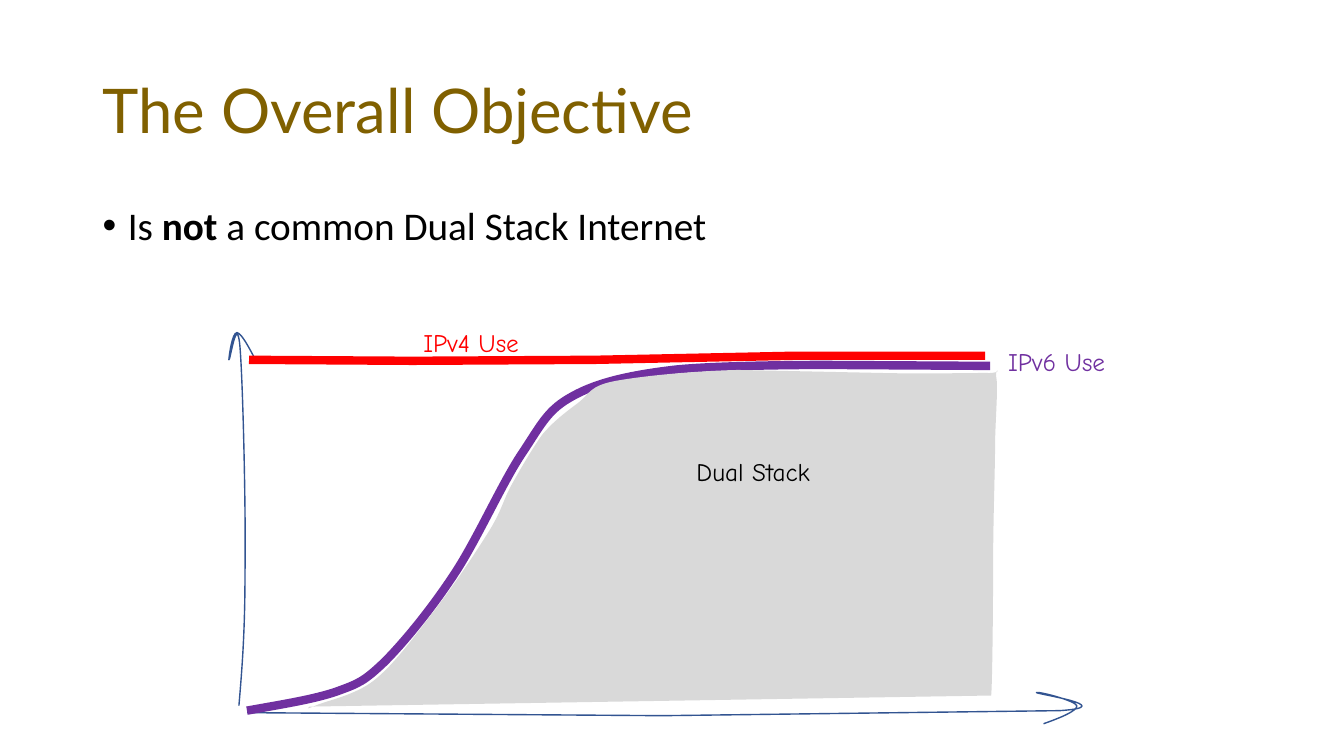
from dataclasses import dataclass

from lxml import etree
from pptx import Presentation
from pptx.dml.color import RGBColor
from pptx.enum import text
from pptx.oxml import ns
from pptx.util import Pt

PX = 9144  # 100 px to the inch


@dataclass(frozen=True)
class Theme:
    title: str = "806000"
    ink: str = "000000"
    axis: str = "325491"
    ipv4: str = "FF0000"
    ipv6: str = "7030A0"
    area: str = "D9D9D9"
    title_font: str = "Lato"
    body_font: str = "Calibri"
    label_font: str = "Comic Neue"
    title_size: int = 44
    body_size: int = 28
    label_size: int = 18
    thin: int = 1
    thick: int = 6


THEME = Theme()

# Outlines in px: a start point, then lines (x, y) or Bézier curves (two controls, end)
X_AXIS = [(245, 707), (657, 710), (1051, 705),
          (1113, 701, 1025, 688, 1028, 687),
          (1031, 686, 1066, 695, 1068, 700),
          (1069, 705, 1052, 712, 1035, 718)]
Y_AXIS = [(237, 700),
          (240, 664, 243, 628, 243, 568),
          (244, 509, 241, 380, 238, 344),
          (235, 309, 228, 360, 227, 357),
          (227, 355, 230, 330, 235, 330),
          (240, 331, 247, 345, 255, 360)]
IPV6_CURVE = [(245, 705),
              (278, 699, 311, 694, 334, 686),
              (356, 678, 361, 676, 381, 657),
              (401, 637, 428, 604, 451, 569),
              (474, 534, 499, 477, 519, 448),
              (538, 419, 544, 406, 568, 393),
              (593, 379, 626, 372, 667, 367),
              (709, 362, 817, 362, 817, 362),
              (982, 363)]
DUAL_STACK_AREA = [(307, 701),
                   (305, 703, 303, 704, 313, 700),
                   (324, 695, 352, 690, 371, 675),
                   (390, 660, 410, 633, 429, 608),
                   (448, 584, 472, 548, 485, 527),
                   (498, 506, 499, 496, 508, 480),
                   (517, 464, 528, 445, 538, 431),
                   (549, 418, 561, 409, 573, 400),
                   (585, 391, 584, 383, 610, 378),
                   (637, 373, 688, 368, 732, 367),
                   (874, 370),
                   (915, 371, 959, 370, 978, 370),
                   (997, 371, 987, 362, 988, 373),
                   (990, 383, 988, 404, 987, 436),
                   (987, 467, 985, 514, 985, 563),
                   (985, 612, 984, 689, 983, 690)]
IPV4_LINE = [(247, 357), (409, 358), (590, 357), (787, 353), (977, 353)]


def write_outline(sp, outline, left, top):
    """Give a freeform its lines and cubic curves, relative to its box."""
    geometry = sp._element.find(".//" + ns.qn("a:path"))
    for child in list(geometry):
        geometry.remove(child)
    for i, segment in enumerate(outline):
        tag = "a:moveTo" if i == 0 else "a:lnTo" if len(segment) == 2 else "a:cubicBezTo"
        step = etree.SubElement(geometry, ns.qn(tag))
        for x, y in zip(segment[::2], segment[1::2]):
            pt = etree.SubElement(step, ns.qn("a:pt"))
            pt.set("x", str(x - left))
            pt.set("y", str(y - top))


def add_outline(slide, outline, left, top, width, height,
                line=None, weight=THEME.thin, fill=None):
    builder = slide.shapes.build_freeform(left, top, scale=PX)
    builder.add_line_segments([(left + width, top + height)], close=False)
    sp = builder.convert_to_shape()
    write_outline(sp, outline, left, top)
    sp.shadow.inherit = False
    if fill:
        sp.fill.solid()
        sp.fill.fore_color.rgb = RGBColor.from_string(fill)
    else:
        sp.fill.background()
    if line:
        sp.line.color.rgb = RGBColor.from_string(line)
        sp.line.width = Pt(weight)
    else:
        sp.line.fill.background()


def add_text(slide, runs, *box, font, size, color, wrap=True, middle=False,
             spacing=None, before=0, bullet=False):
    """Add one paragraph; runs is a list of (words, bold) pairs."""
    sp = slide.shapes.add_textbox(*(n * PX for n in box))
    tf = sp.text_frame
    tf.word_wrap = wrap
    tf.auto_size = text.MSO_AUTO_SIZE.NONE if wrap else text.MSO_AUTO_SIZE.SHAPE_TO_FIT_TEXT
    tf.vertical_anchor = text.MSO_ANCHOR.MIDDLE if middle else text.MSO_ANCHOR.TOP
    p = tf.paragraphs[0]
    p.line_spacing = spacing
    p.space_before = Pt(before)
    if bullet:
        pPr = p._p.get_or_add_pPr()
        pPr.set("marL", str(25 * PX))
        pPr.set("indent", str(-25 * PX))
        etree.SubElement(pPr, ns.qn("a:buFont")).set("typeface", "Arial")
        etree.SubElement(pPr, ns.qn("a:buChar")).set("char", "•")
    for words, bold in runs:
        r = p.add_run()
        r.text = words
        r.font.name = font
        r.font.size = Pt(size)
        r.font.bold = bold
        r.font.color.rgb = RGBColor.from_string(color)


def add_label(slide, words, *box, color):
    add_text(slide, [(words, False)], *box, font=THEME.label_font,
             size=THEME.label_size, color=color, wrap=False)


def main():
    prs = Presentation()
    prs.slide_width, prs.slide_height = 1333 * PX, 750 * PX
    slide = prs.slides.add_slide(prs.slide_layouts[6])

    # Heading and bullet
    add_text(slide, [("The Overall Objective", False)], 92, 40, 1150, 145,
             font=THEME.title_font, size=THEME.title_size, color=THEME.title,
             middle=True, spacing=0.9)
    add_text(slide, [("Is ", False), ("not", True), (" a common Dual Stack Internet", False)],
             92, 200, 1150, 476, font=THEME.body_font, size=THEME.body_size,
             color=THEME.ink, spacing=0.9, before=10, bullet=True)

    # Hand-drawn axes
    add_outline(slide, X_AXIS, 245, 687, 828, 32, line=THEME.axis)
    add_outline(slide, Y_AXIS, 227, 330, 28, 70 * 10 // 10 + 300, line=THEME.axis)

    # Adoption curves, shared area and labels
    add_outline(slide, IPV6_CURVE, 245, 362, 737, 342, line=THEME.ipv6, weight=THEME.thick)
    add_label(slide, "IPv6 Use", 990, 339, 140, 40, color=THEME.ipv6)
    add_label(slide, "IPv4 Use", 410, 320, 139, 40, color=THEME.ipv4)
    add_outline(slide, DUAL_STACK_AREA, 305, 367, 684, 335, fill=THEME.area)
    add_label(slide, "Dual Stack", 681, 448, 163, 40, color=THEME.ink)
    add_outline(slide, IPV4_LINE, 247, 353, 730, 4, line=THEME.ipv4, weight=THEME.thick)

    prs.save("out.pptx")


if __name__ == "__main__":
    main()
